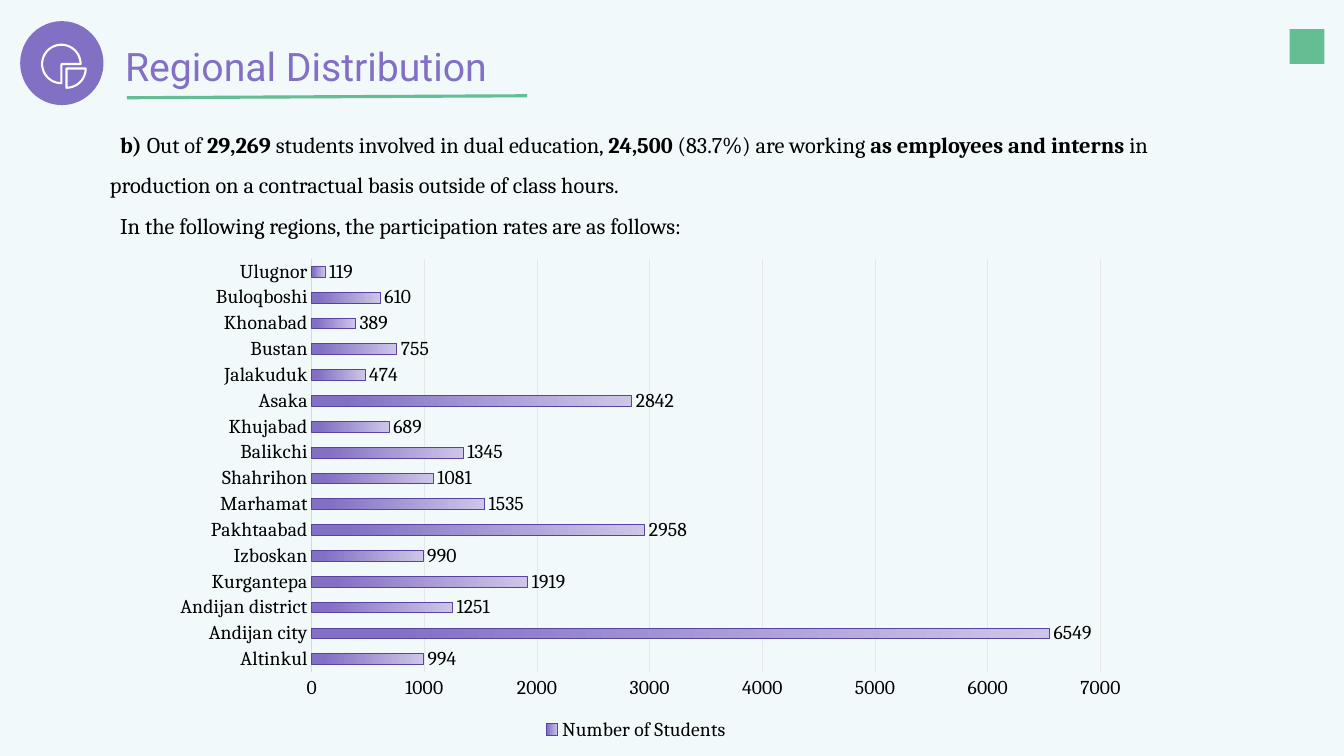
import math
from dataclasses import dataclass

from lxml import etree
from pptx import Presentation
from pptx import util as u
from pptx.chart import data as chart_data
from pptx.dml.color import RGBColor
from pptx.enum import chart as ch, shapes, text
from pptx.oxml import ns

COLORS = {
    "background": "F2F9FB", "purple": "8270C4", "lilac": "CDC6E7", "violet": "5843A4",
    "green": "64BD93", "white": "FFFFFF", "black": "000000", "axis": "D9D9D9", "grid": "E6E6E6",
}
SLIDE_WIDTH, SLIDE_HEIGHT = u.Inches(13.33), u.Inches(7.5)
COLUMN, ROW = SLIDE_WIDTH / 100, SLIDE_HEIGHT / 100


@dataclass(frozen=True)
class Area:
    left: float
    top: float
    width: float
    height: float

    def emu(self) -> tuple[int, int, int, int]:
        return (round(self.left * COLUMN), round(self.top * ROW),
                round(self.width * COLUMN), round(self.height * ROW))


@dataclass(frozen=True)
class Badge:
    preset: shapes.MSO_SHAPE
    area: Area
    color: str


@dataclass(frozen=True)
class Sector:
    column: float
    row: float
    start: int
    end: int


@dataclass(frozen=True)
class Share:
    x: float
    y: float
    w: float
    h: float


HEADING = Area(8.55, 4.93, 39.53, 7.6)
SUMMARY = Area(7.43, 14.93, 81.47, 19.47)
REGIONS = Area(3.9, 30.8, 80.4, 69.2)
PLOT = Share(0.24, 0.05, 0.73, 0.79)
LEGEND = Share(0.44, 0.92, 0.2, 0.06)
BADGES = [
    Badge(shapes.MSO_SHAPE.OVAL, Area(1.5, 2.8, 6.2, 11.1), "purple"),
    Badge(shapes.MSO_SHAPE.RECTANGLE, Area(95.95, 3.87, 2.6, 4.6), "green"),
]
SECTORS = [Sector(4.57, 8.47, 90, 360), Sector(4.95, 9.07, 0, 90)]
SECTOR_RADIUS = 1.43

PARAGRAPHS = [
    [("b) ", True), ("Out of ", False), ("29,269", True),
     (" students involved in dual education, ", False), ("24,500", True),
     (" (83.7%) are working ", False), ("as employees and interns", True),
     (" in production on a contractual basis outside of class hours.", False)],
    [("In the following regions, the participation rates are as follows:", False)],
]
STUDENTS = {
    "Altinkul": 994, "Andijan city": 6549, "Andijan district": 1251, "Kurgantepa": 1919,
    "Izboskan": 990, "Pakhtaabad": 2958, "Marhamat": 1535, "Shahrihon": 1081,
    "Balikchi": 1345, "Khujabad": 689, "Asaka": 2842, "Jalakuduk": 474,
    "Bustan": 755, "Khonabad": 389, "Buloqboshi": 610, "Ulugnor": 119,
}


def rgb(name: str) -> RGBColor:
    return RGBColor.from_string(COLORS[name])


def style_font(font, name: str, size: float, color: str) -> None:
    font.name, font.size = name, u.Pt(size)
    font.color.rgb = rgb(color)


def style_line(line, color: str, width: float) -> None:
    line.color.rgb = rgb(color)
    line.width = u.Pt(width)


def place(item, area: Area) -> None:
    item.left, item.top, item.width, item.height = area.emu()


def write_heading(slide) -> None:
    heading = slide.shapes.title
    place(heading, HEADING)
    frame = heading.text_frame
    frame.text = "Regional Distribution"
    frame.auto_size = text.MSO_AUTO_SIZE.NONE
    frame.vertical_anchor = text.MSO_ANCHOR.MIDDLE
    frame.paragraphs[0].alignment = text.PP_ALIGN.LEFT
    style_font(frame.paragraphs[0].runs[0].font, "Roboto", 28, "purple")


def write_summary(slide) -> None:
    summary = slide.placeholders[1]
    place(summary, SUMMARY)
    frame = summary.text_frame
    frame.auto_size = text.MSO_AUTO_SIZE.NONE
    for index, pieces in enumerate(PARAGRAPHS):
        paragraph = frame.add_paragraph() if index else frame.paragraphs[0]
        properties = paragraph._p.get_or_add_pPr()
        properties.set("marL", "0")
        properties.set("indent", str(u.Inches(0.1)))
        etree.SubElement(properties, ns.qn("a:buNone"))
        paragraph.line_spacing = 1.5
        paragraph.space_before = u.Pt(0)
        for wording, bold in pieces:
            run = paragraph.add_run()
            run.text = wording
            run.font.bold = bold
            style_font(run.font, "Cambria", 16, "black")


def draw_badge(slide, badge: Badge) -> None:
    mark = slide.shapes.add_shape(badge.preset, *badge.area.emu())
    mark.shadow.inherit = False
    mark.fill.solid()
    mark.fill.fore_color.rgb = rgb(badge.color)
    mark.line.fill.background()


def draw_sector(slide, sector: Sector) -> None:
    x, y, radius = sector.column * COLUMN, sector.row * ROW, SECTOR_RADIUS * COLUMN
    arc = [(round(x + radius * math.cos(math.radians(angle))),
            round(y + radius * math.sin(math.radians(angle))))
           for angle in range(sector.start, sector.end + 1, 5)]
    builder = slide.shapes.build_freeform(round(x), round(y))
    builder.add_line_segments(arc, close=True)
    wedge = builder.convert_to_shape()
    wedge.shadow.inherit = False
    wedge.fill.background()
    style_line(wedge.line, "white", 1.5)


def draw_underline(slide) -> None:
    left, top, width, rise = Area(9.45, 12.93, 29.78, -0.26).emu()
    underline = slide.shapes.add_connector(
        shapes.MSO_CONNECTOR.STRAIGHT, left, top, left + width, top + rise)
    style_line(underline.line, "green", 2.25)
    etree.SubElement(underline._element.spPr, ns.qn("a:effectLst"))


def set_layout(parent, share: Share, after: str | None, inner: bool) -> None:
    for old in parent.findall(ns.qn("c:layout")):
        parent.remove(old)
    layout = etree.Element(ns.qn("c:layout"))
    manual = etree.SubElement(layout, ns.qn("c:manualLayout"))
    settings = [("layoutTarget", "inner")] if inner else []
    settings += [("xMode", "edge"), ("yMode", "edge")]
    settings += [(side, str(getattr(share, side))) for side in "xywh"]
    for tag, value in settings:
        etree.SubElement(manual, ns.qn(f"c:{tag}")).set("val", value)
    position = 0 if after is None else parent.index(parent.find(ns.qn(after))) + 1
    parent.insert(position, layout)


def draw_regions(slide) -> None:
    data = chart_data.CategoryChartData(number_format="General")
    data.categories = list(STUDENTS)
    data.add_series("Number of Students", list(STUDENTS.values()))
    chart = slide.shapes.add_chart(ch.XL_CHART_TYPE.BAR_CLUSTERED, *REGIONS.emu(), data).chart
    chart.has_title = False
    style_font(chart.font, "Cambria", 14, "black")

    for axis in (chart.category_axis, chart.value_axis):
        axis.major_tick_mark = axis.minor_tick_mark = ch.XL_TICK_MARK.NONE
        style_font(axis.tick_labels.font, "Cambria", 14, "black")
    style_line(chart.category_axis.format.line, "axis", 0.75)
    scale = chart.value_axis
    scale.minimum_scale, scale.maximum_scale, scale.major_unit = 0, 7000, 1000
    scale.format.line.fill.background()
    scale.has_major_gridlines = True
    style_line(scale.major_gridlines.format.line, "grid", 0.75)

    chart.has_legend = True
    chart.legend.position = ch.XL_LEGEND_POSITION.RIGHT
    chart.legend.include_in_layout = False
    style_font(chart.legend.font, "Cambria", 14, "black")
    set_layout(chart.legend._element, LEGEND, "c:legendPos", False)
    set_layout(chart._chartSpace.chart.plotArea, PLOT, None, True)

    plot = chart.plots[0]
    plot.vary_by_categories = False
    plot.gap_width, plot.overlap = 140, -40
    students = plot.series[0]
    fill = students.format.fill
    fill.gradient()
    fill.gradient_angle = 180
    for stop, (position, color) in zip(fill.gradient_stops, [(0, "lilac"), (0.9, "purple")]):
        stop.position = position
        stop.color.rgb = rgb(color)
    style_line(students.format.line, "violet", 0.75)
    labels = students.data_labels
    labels.show_value = True
    labels.position = ch.XL_LABEL_POSITION.OUTSIDE_END
    style_font(labels.font, "Cambria", 14, "black")


def main() -> None:
    deck = Presentation()
    deck.slide_width, deck.slide_height = SLIDE_WIDTH, SLIDE_HEIGHT
    slide = deck.slides.add_slide(deck.slide_layouts[1])
    slide.background.fill.solid()
    slide.background.fill.fore_color.rgb = rgb("background")
    write_summary(slide)
    write_heading(slide)
    draw_underline(slide)
    draw_regions(slide)
    for badge in BADGES:
        draw_badge(slide, badge)
    for sector in SECTORS:
        draw_sector(slide, sector)
    deck.save("out.pptx")


if __name__ == "__main__":
    main()
